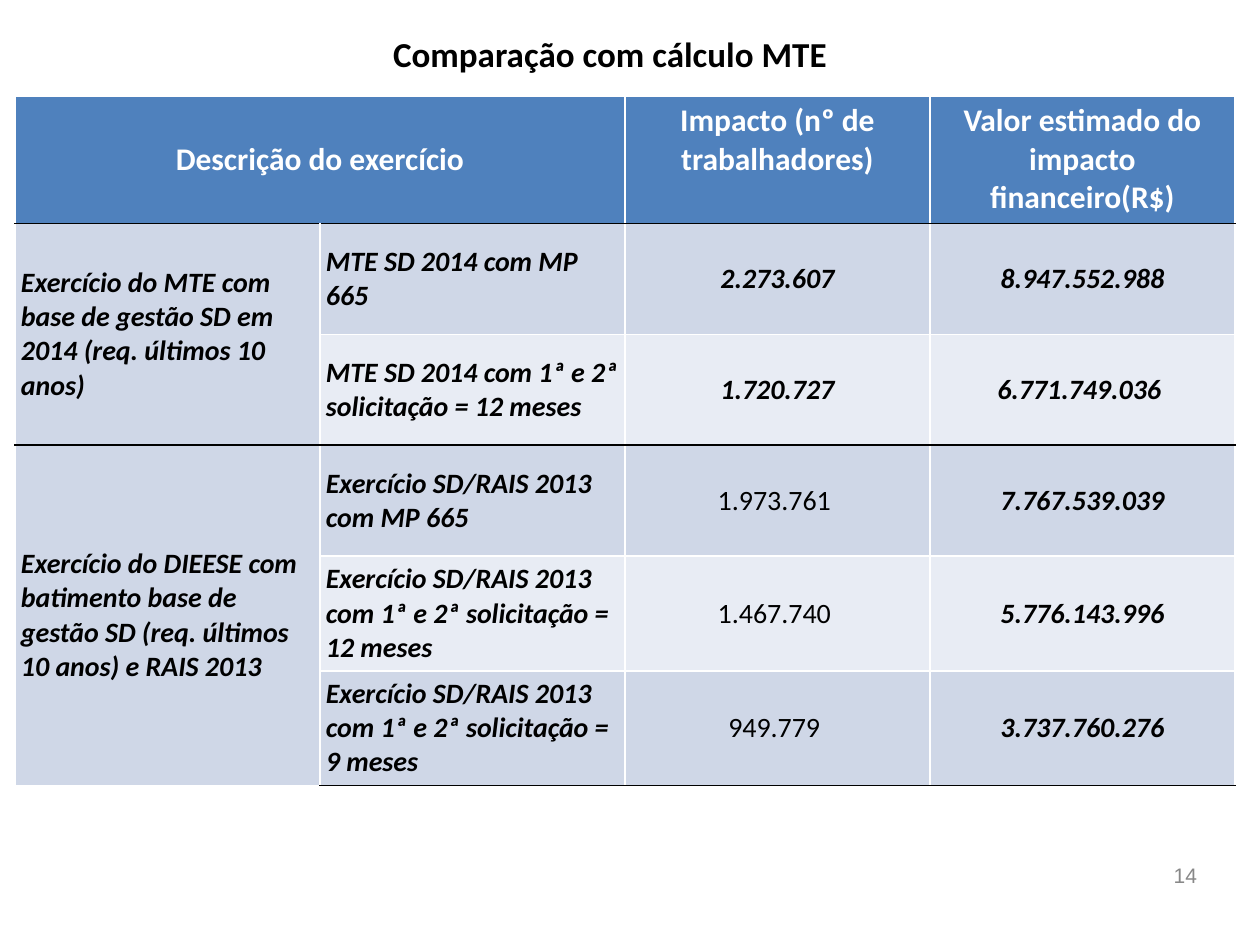
from lxml import etree
from pptx import Presentation
from pptx.dml.color import RGBColor
from pptx.enum.text import MSO_ANCHOR, MSO_AUTO_SIZE, PP_ALIGN
from pptx.oxml.ns import qn
from pptx.util import Pt

LEFT, CENTER, RIGHT = PP_ALIGN.LEFT, PP_ALIGN.CENTER, PP_ALIGN.RIGHT
TOP, MIDDLE = MSO_ANCHOR.TOP, MSO_ANCHOR.MIDDLE

TITLE = "Comparação com cálculo MTE"
PAGE_NUMBER = "14"
HEADERS = ["Descrição do exercício", None, "Impacto (nº de trabalhadores)",
           "Valor estimado do impacto financeiro(R$)"]
# Each group: description, rows of (exercise, workers, value), workers emphasised
GROUPS = [
    ("Exercício do MTE com base de gestão SD em 2014 (req. últimos 10 anos)", [
        ("MTE SD 2014 com MP 665", "2.273.607", "8.947.552.988"),
        ("MTE SD 2014 com 1ª e 2ª solicitação = 12 meses", "1.720.727", "6.771.749.036 "),
    ], True),
    ("Exercício do DIEESE com batimento base de gestão SD (req. últimos 10 anos) e RAIS 2013", [
        ("Exercício SD/RAIS 2013 com MP 665", "1.973.761 ", "7.767.539.039"),
        ("Exercício SD/RAIS 2013 com 1ª e 2ª solicitação = 12 meses", "1.467.740 ", "5.776.143.996"),
        ("Exercício SD/RAIS 2013 com 1ª e 2ª solicitação = 9 meses", "949.779 ", "3.737.760.276"),
    ], False),
]
COLORS = {"header": "4F81BD", "odd": "CFD7E7", "even": "E8ECF4",
          "white": "FFFFFF", "black": "000000", "page": "888888"}

SLIDE_W, SLIDE_H = 1260, 945
TABLE_X, TABLE_Y, COLUMN_W, ROW_H = 15, 96, 305, 111
PADDING, TIGHT_PADDING = 6, 1
EMU_PER_PX = 9144000 / SLIDE_W


def px(length):
    return round(length * EMU_PER_PX)


def rgb(name):
    return RGBColor.from_string(COLORS[name])


def write(paragraph, text, size, color, align, bold=False, italic=False, face="Calibri"):
    paragraph.text = text
    paragraph.alignment = align
    font = paragraph.font
    font.name, font.size, font.bold, font.italic = face, Pt(size), bold, italic
    font.color.rgb = rgb(color)


def set_margins(holder, margin):
    holder.margin_left = holder.margin_right = px(margin)
    holder.margin_top = holder.margin_bottom = px(margin)


def add_text(slide, box, margin, anchor, *text_style, **font_style):
    frame = slide.shapes.add_textbox(*map(px, box)).text_frame
    frame.word_wrap = True
    frame.vertical_anchor = anchor
    set_margins(frame, margin)
    write(frame.paragraphs[0], *text_style, **font_style)
    return frame


def style_cell(cell, fill, top, bottom):
    """Draw the four cell borders, then the fill that must follow them in the XML."""
    properties = cell._tc.get_or_add_tcPr()
    for side, color in (("L", "white"), ("R", "white"), ("T", top), ("B", bottom)):
        line = etree.SubElement(properties, qn(f"a:ln{side}"), w=str(Pt(1)))
        solid = etree.SubElement(line, qn("a:solidFill"))
        etree.SubElement(solid, qn("a:srgbClr"), val=COLORS[color])
    cell.fill.solid()
    cell.fill.fore_color.rgb = rgb(fill)


def fill_cell(cell, text, anchor, margin, *text_style, **font_style):
    cell.vertical_anchor = anchor
    set_margins(cell, margin)
    write(cell.text_frame.paragraphs[0], text, *text_style, **font_style)


def add_comparison(slide):
    row_count = 1 + sum(len(rows) for _, rows, _ in GROUPS)
    column_count = len(HEADERS)
    table = slide.shapes.add_table(
        row_count, column_count, px(TABLE_X), px(TABLE_Y),
        px(COLUMN_W * column_count), px(ROW_H * row_count)).table
    for column in table.columns:
        column.width = px(COLUMN_W)
    for row in table.rows:
        row.height = px(ROW_H)

    for c, header in enumerate(HEADERS):
        cell = table.cell(0, c)
        style_cell(cell, "header", "white", "black")
        if header:
            fill_cell(cell, header, TOP if c else MIDDLE, PADDING,
                      18, "white", CENTER, bold=True)
    table.cell(0, 0).merge(table.cell(0, 1))

    first = 1
    for description, rows, emphasised in GROUPS:
        last = first + len(rows) - 1
        for r, (exercise, workers, value) in enumerate(rows, first):
            top = "black" if r == first else "white"
            bottom = "black" if r == last else "white"
            for c in range(column_count):
                fill = "odd" if c == 0 or r % 2 else "even"
                style_cell(table.cell(r, c), fill, top, bottom)
            number_margin = PADDING if r == 1 else TIGHT_PADDING
            fill_cell(table.cell(r, 1), exercise, MIDDLE, PADDING,
                      16, "black", LEFT, bold=True, italic=True)
            fill_cell(table.cell(r, 2), workers, MIDDLE, number_margin,
                      16, "black", CENTER, bold=emphasised, italic=emphasised)
            fill_cell(table.cell(r, 3), value, MIDDLE, number_margin,
                      16, "black", CENTER, bold=True, italic=True)
        fill_cell(table.cell(first, 0), description, MIDDLE, PADDING,
                  16, "black", LEFT, bold=True, italic=True)
        table.cell(first, 0).merge(table.cell(last, 0))
        first = last + 1


def main():
    presentation = Presentation()
    presentation.slide_width, presentation.slide_height = px(SLIDE_W), px(SLIDE_H)
    slide = presentation.slides.add_slide(presentation.slide_layouts[6])
    add_comparison(slide)
    title = add_text(slide, (84, 27, 1052, 53), PADDING, TOP,
                     TITLE, 20, "black", CENTER, bold=True)
    title.auto_size = MSO_AUTO_SIZE.SHAPE_TO_FIT_TEXT
    add_text(slide, (903, 857, 294, 37), 0, MIDDLE,
             PAGE_NUMBER, 12, "page", RIGHT, face="Arial")
    presentation.save("out.pptx")


if __name__ == "__main__":
    main()
